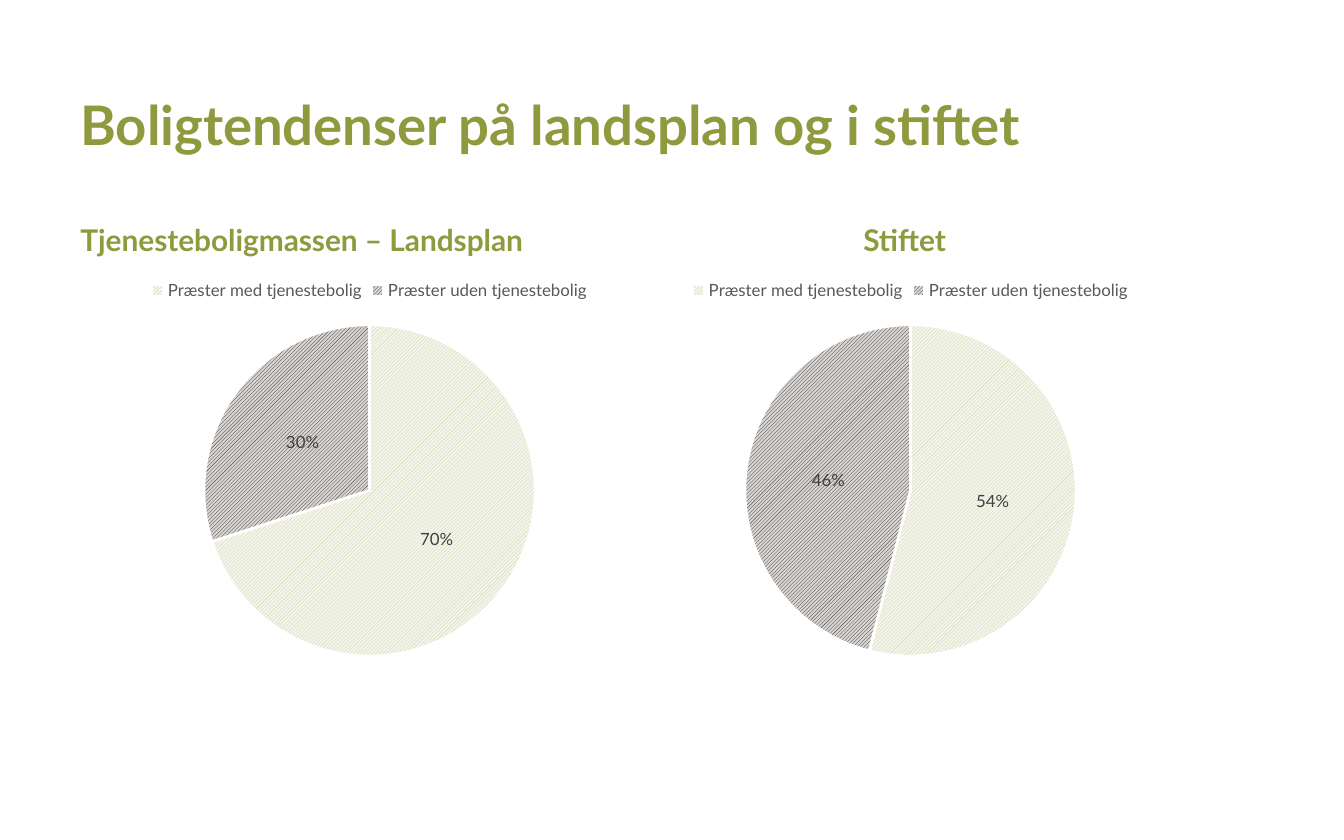
"""Build a slide comparing clergy housing nationally and in the diocese."""
from pptx import Presentation
from pptx.chart.data import CategoryChartData
from pptx.dml.color import RGBColor
from pptx.enum.chart import XL_CHART_TYPE as ChartType
from pptx.enum.chart import XL_LABEL_POSITION as LabelPosition
from pptx.enum.chart import XL_LEGEND_POSITION as LegendPosition
from pptx.enum.dml import MSO_PATTERN as Pattern
from pptx.util import Pt

FONT = "Lato"
COLORS = {
    "heading": "8F993E",
    "legend": "595959",
    "label": "404040",
    "text": "000000",
    "border": "FFFFFF",
}
CATEGORIES = ["Præster med tjenestebolig", "Præster uden tjenestebolig"]
SLICE_PATTERNS = [("C7CC9E", "F4F5EC"), ("2D2926", "D8D4D1")]
TEXTS = [
    ("Boligtendenser på landsplan og i stiftet", 36, 48.9, 648, 29.2),
    ("Tjenesteboligmassen – Landsplan", 36, 118.7, 300, 16),
    ("Stiftet", 455.4, 118.7, 120, 16),
]
PIES = [
    ((70, 30), 36, 324),
    ((54, 46), 320.4, 334.8),
]
PIE_TOP, PIE_HEIGHT = 141.84, 219.6


def set_font(font, size, color, bold=False):
    font.name = FONT
    font.size = Pt(size)
    font.bold = bold
    font.color.rgb = RGBColor.from_string(COLORS[color])


def add_text(slide, text, left, top, width, size):
    shape = slide.shapes.add_textbox(Pt(left), Pt(top), Pt(width), Pt(size * 1.2))
    frame = shape.text_frame
    frame.word_wrap = True
    frame.margin_top = frame.margin_bottom = 0
    frame.text = text
    set_font(frame.paragraphs[0].runs[0].font, size, "heading", bold=True)


def add_pie(slide, values, left, width):
    data = CategoryChartData()
    data.categories = CATEGORIES
    data.add_series("Series 1", values)
    chart = slide.shapes.add_chart(
        ChartType.PIE, Pt(left), Pt(PIE_TOP), Pt(width), Pt(PIE_HEIGHT), data
    ).chart
    set_font(chart.font, 10, "text")
    chart.has_title = False
    chart.has_legend = True
    chart.legend.position = LegendPosition.TOP
    chart.legend.include_in_layout = False
    set_font(chart.legend.font, 9, "legend")

    plot = chart.plots[0]
    plot.vary_by_categories = True
    for index, (foreground, background) in enumerate(SLICE_PATTERNS):
        slice_format = plot.series[0].points[index].format
        fill = slice_format.fill
        fill.patterned()
        fill.pattern = Pattern.LIGHT_UPWARD_DIAGONAL
        fill.fore_color.rgb = RGBColor.from_string(foreground)
        fill.back_color.rgb = RGBColor.from_string(background)
        slice_format.line.width = Pt(1.5)
        slice_format.line.color.rgb = RGBColor.from_string(COLORS["border"])

    labels = plot.series[0].data_labels
    labels.show_percentage = True
    labels.show_value = False
    labels.number_format = "0%"
    labels.number_format_is_linked = False
    labels.position = LabelPosition.CENTER
    set_font(labels.font, 9, "label")


def main():
    presentation = Presentation()
    presentation.slide_width, presentation.slide_height = Pt(720), Pt(450)
    slide = presentation.slides.add_slide(presentation.slide_layouts[6])
    for text in TEXTS:
        add_text(slide, *text)
    for pie in PIES:
        add_pie(slide, *pie)
    presentation.save("out.pptx")


if __name__ == "__main__":
    main()
